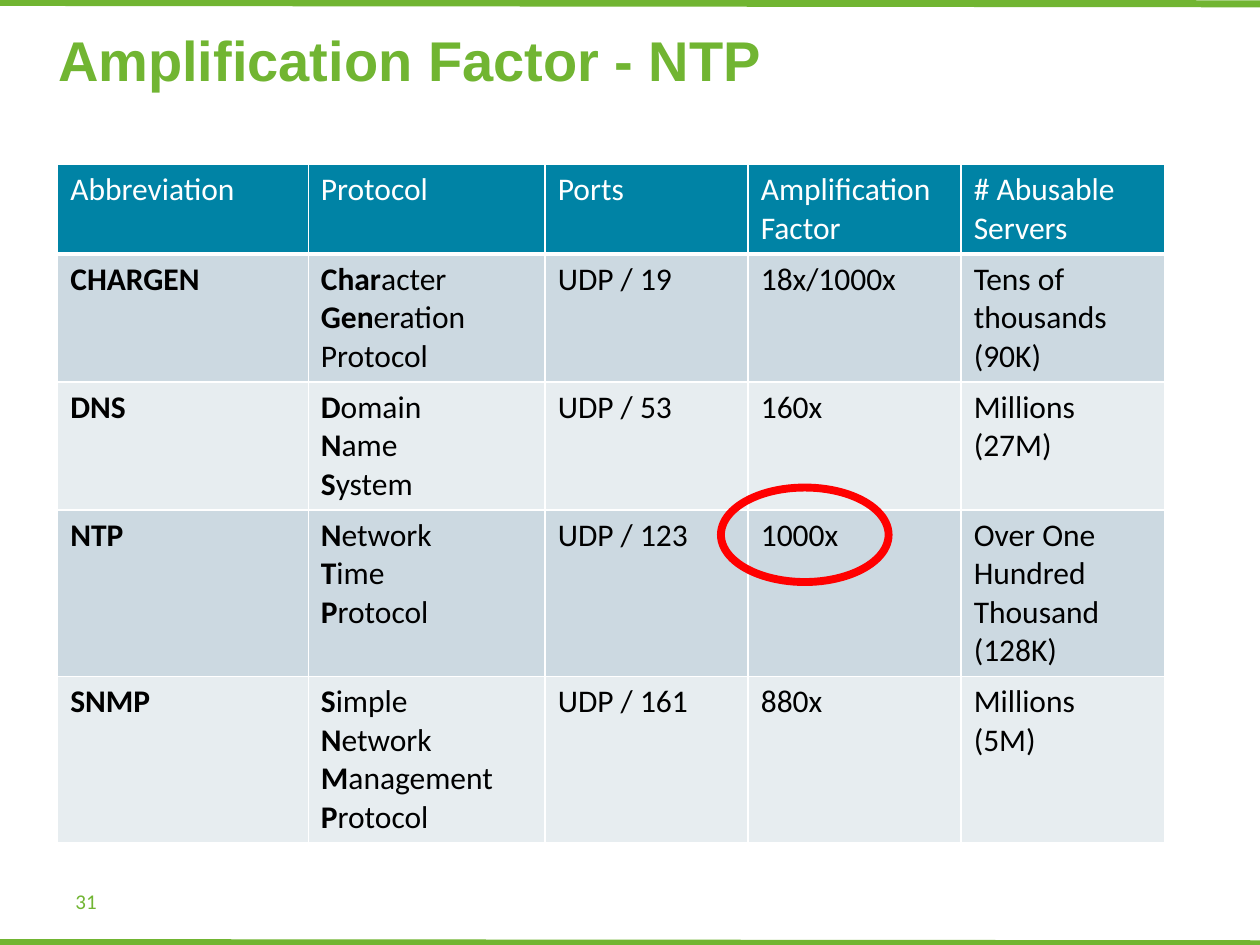
from dataclasses import dataclass

import pptx
import pptx.dml.color
import pptx.enum.shapes
import pptx.enum.text
import pptx.oxml
import pptx.oxml.ns
import pptx.util

Pt = pptx.util.Pt
MIDDLE = pptx.enum.text.MSO_ANCHOR.MIDDLE

COLORS = {
    "green": "71B532",
    "header": "0083A5",
    "odd_row": "CCD9E1",
    "even_row": "E7EDF0",
    "white": "FFFFFF",
    "black": "000000",
    "red": "FF0000",
}


@dataclass(frozen=True)
class Service:
    abbreviation: str
    protocol: str  # one line per paragraph; letters before "|" are bold
    ports: str
    factor: str
    servers: str
    height: float


@dataclass(frozen=True)
class Rule:
    start_y: float
    end_y: float


HEADINGS = ("Abbreviation", "Protocol", "Ports", "Amplification\nFactor", "# Abusable\nServers")
HEADER_HEIGHT = 50
COLUMN_WIDTHS = (143.2, 135.4, 116, 121.7, 116.6)
SERVICES = (
    Service("CHARGEN|", "Char|acter\nGen|eration\nProtocol", "UDP / 19", "18x/1000x",
            "Tens of thousands\n(90K)", 73),
    Service("DNS|", "D|omain\nN|ame\nS|ystem", "UDP / 53", "160x", "Millions (27M)", 73),
    Service("NTP|", "N|etwork\nT|ime\nP|rotocol", "UDP / 123", "1000x",
            "Over One Hundred Thousand\n(128K)", 95),
    Service("SNMP|", "S|imple\nN|etwork\nM|anagement\nP|rotocol", "UDP / 161", "880x",
            "Millions\n(5M)", 95),
)
RULES = (Rule(538.6, 539.3), Rule(1.4, 2.2))


def rgb(color: str) -> pptx.dml.color.RGBColor:
    return pptx.dml.color.RGBColor.from_string(COLORS[color])


def add_run(paragraph, text: str, font: str, size: float, color: str, bold: bool = False) -> None:
    run = paragraph.add_run()
    run.text = text
    run.font.name = font
    run.font.size = Pt(size)
    run.font.bold = bold
    run.font.color.rgb = rgb(color)


def draw_rule(slide, rule: Rule) -> None:
    line = slide.shapes.add_connector(
        pptx.enum.shapes.MSO_CONNECTOR.STRAIGHT, Pt(0), Pt(rule.start_y), Pt(721.4), Pt(rule.end_y))
    line.line.color.rgb = rgb("green")
    line.line.width = Pt(4)
    line._element.spPr.append(pptx.oxml.parse_xml(
        f'<a:effectLst {pptx.oxml.ns.nsdecls("a")}/>'))


def set_borders(cell, top: float, bottom: float) -> None:
    properties = cell._tc.get_or_add_tcPr()
    for side, width in (("L", 1), ("R", 1), ("T", top), ("B", bottom)):
        properties.append(pptx.oxml.parse_xml(
            f'<a:ln{side} {pptx.oxml.ns.nsdecls("a")} w="{Pt(width)}"><a:solidFill>'
            f'<a:srgbClr val="{COLORS["white"]}"/></a:solidFill></a:ln{side}>'))


def fill_cell(cell, text: str, fill: str, color: str, top: float, bottom: float) -> None:
    set_borders(cell, top, bottom)
    cell.fill.solid()
    cell.fill.fore_color.rgb = rgb(fill)
    for index, line in enumerate(text.split("\n")):
        frame = cell.text_frame
        paragraph = frame.add_paragraph() if index else frame.paragraphs[0]
        bold_part, _, plain_part = line.rpartition("|")
        for part, bold in ((bold_part, True), (plain_part, False)):
            if part:
                add_run(paragraph, part, "Calibri", 18, color, bold)


def draw_services(slide) -> None:
    heights = [HEADER_HEIGHT] + [service.height for service in SERVICES]
    table = slide.shapes.add_table(
        len(heights), len(COLUMN_WIDTHS), Pt(33), Pt(94),
        Pt(sum(COLUMN_WIDTHS)), Pt(sum(heights))).table
    for column, width in zip(table.columns, COLUMN_WIDTHS):
        column.width = Pt(width)
    for row, height in zip(table.rows, heights):
        row.height = Pt(height)
    for column, heading in enumerate(HEADINGS):
        fill_cell(table.cell(0, column), heading, "header", "white", 1, 3)
    for row, service in enumerate(SERVICES, start=1):
        texts = (service.abbreviation, service.protocol, service.ports,
                 service.factor, service.servers)
        fill = "odd_row" if row % 2 else "even_row"
        for column, text in enumerate(texts):
            fill_cell(table.cell(row, column), text, fill, "black", 3 if row == 1 else 1, 1)


def draw_highlight(slide) -> None:
    highlight = slide.shapes.add_shape(
        pptx.enum.shapes.MSO_SHAPE.OVAL, Pt(412), Pt(278.6), Pt(95.8), Pt(54))
    highlight.shadow.inherit = False
    highlight.fill.background()
    highlight.line.color.rgb = rgb("red")
    highlight.line.width = Pt(4.5)


def write_title(slide) -> None:
    title = slide.shapes.title
    title.left, title.top, title.width, title.height = Pt(26), Pt(10.8), Pt(668), Pt(46)
    title.text_frame.vertical_anchor = MIDDLE
    heading = title.text_frame.paragraphs[0]
    heading.alignment = pptx.enum.text.PP_ALIGN.LEFT
    add_run(heading, "Amplification Factor - NTP", "Arial", 32, "green", True)


def write_page_number(slide) -> None:
    page_number = slide.shapes.add_textbox(Pt(36), Pt(500.5), Pt(168), Pt(28.8)).text_frame
    page_number.word_wrap = True
    page_number.vertical_anchor = MIDDLE
    add_run(page_number.paragraphs[0], "31", "Calibri", 12, "green")


def main() -> None:
    deck = pptx.Presentation()
    deck.slide_width, deck.slide_height = Pt(720), Pt(540)
    slide = deck.slides.add_slide(deck.slide_layouts.get_by_name("Title Only"))

    # Green rules along the slide edges
    for rule in RULES:
        draw_rule(slide, rule)

    # Protocol table with the NTP factor circled
    draw_services(slide)
    draw_highlight(slide)

    # Title and page number
    write_title(slide)
    write_page_number(slide)

    deck.save("out.pptx")


if __name__ == "__main__":
    main()
